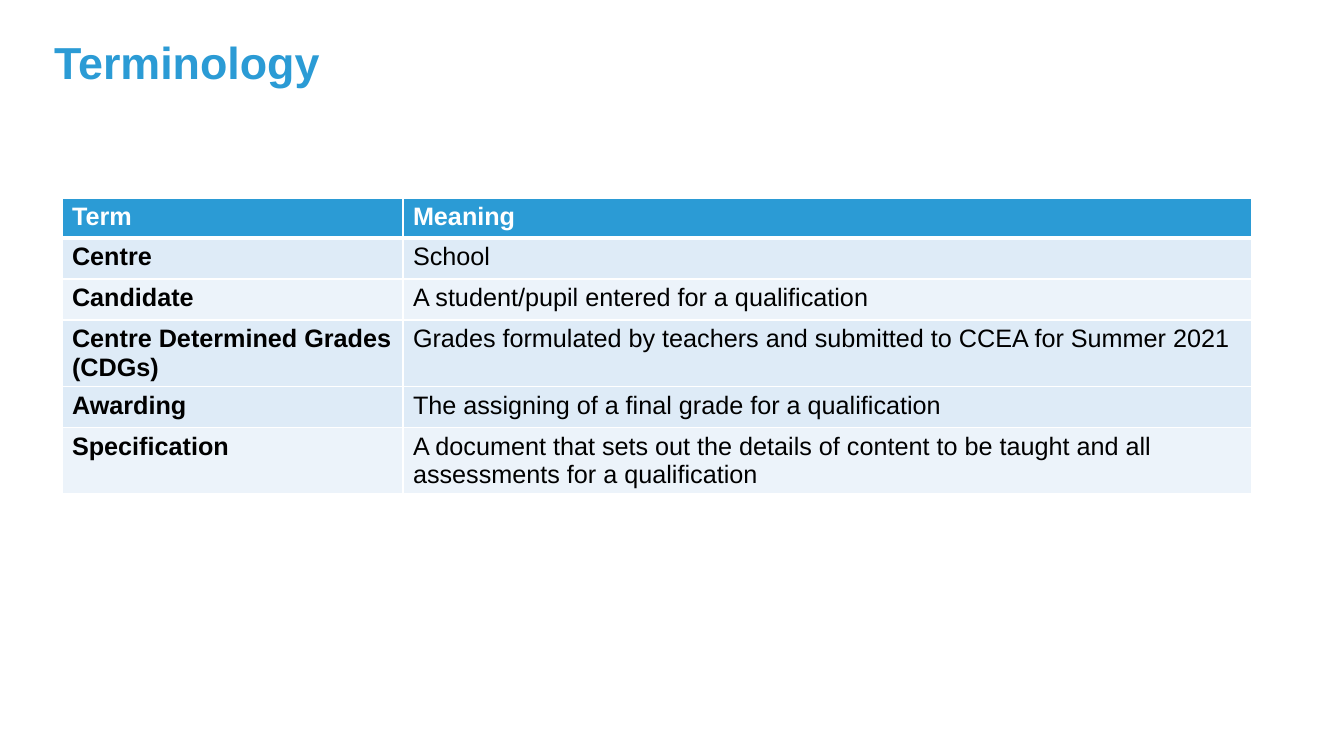
import pptx
import pptx.dml.color
import pptx.enum.text
import pptx.oxml.ns
import pptx.util
import lxml.etree

# Content
TITLE = "Terminology"
HEADER = ("Term", "Meaning")
TERMS = [
    # term, meaning, lines of text, fill
    ("Centre", "School", 1, "DEEBF7"),
    ("Candidate", "A student/pupil entered for a qualification", 1, "ECF3FA"),
    ("Centre Determined Grades (CDGs)",
     "Grades formulated by teachers and submitted to CCEA for Summer 2021",
     2, "DEEBF7"),
    ("Awarding", "The assigning of a final grade for a qualification", 1, "DEEBF7"),
    ("Specification",
     "A document that sets out the details of content to be taught "
     "and all assessments for a qualification", 2, "ECF3FA"),
]

# Style and measures in px
FONT = "Arial"
BLUE, WHITE, BLACK = "2B9BD5", "FFFFFF", "000000"
PX_PER_INCH = 100.8
SLIDE_SIZE = (1344, 756)
TITLE_BOX = (44, 36, 1063, 121)
TABLE_LEFT, TABLE_TOP = 62, 198
COLUMN_WIDTHS = (341, 849)
HEADER_HEIGHT = 40
ROW_HEIGHTS = {1: 41, 2: 66}


def px(length):
    return pptx.util.Emu(round(length * pptx.util.Inches(1) / PX_PER_INCH))


def color(value):
    return pptx.dml.color.RGBColor.from_string(value)


def style_font(font, size, value, bold):
    font.name = FONT
    font.size = pptx.util.Pt(size)
    font.bold = bold
    font.color.rgb = color(value)


def add_borders(cell, bottom_width):
    properties = cell._tc.get_or_add_tcPr()
    qn = pptx.oxml.ns.qn
    for side, width in (("L", 1), ("R", 1), ("T", 1), ("B", bottom_width)):
        line = lxml.etree.SubElement(properties, qn(f"a:ln{side}"),
                                     w=str(pptx.util.Pt(width)))
        fill = lxml.etree.SubElement(line, qn("a:solidFill"))
        lxml.etree.SubElement(fill, qn("a:srgbClr"), val=WHITE)


def fill_cell(cell, text, fill, text_color, bold, bottom_width):
    add_borders(cell, bottom_width)
    cell.fill.solid()
    cell.fill.fore_color.rgb = color(fill)
    cell.text_frame.text = text
    style_font(cell.text_frame.paragraphs[0].runs[0].font, 18, text_color, bold)


def add_title(page):
    box = page.shapes.title
    box.left, box.top, box.width, box.height = map(px, TITLE_BOX)
    frame = box.text_frame
    frame.text = TITLE
    frame.vertical_anchor = pptx.enum.text.MSO_ANCHOR.TOP
    para = frame.paragraphs[0]
    para.alignment = pptx.enum.text.PP_ALIGN.LEFT
    para.line_spacing = 0.9
    style_font(para.runs[0].font, 32, BLUE, True)


def add_terms(page):
    heights = [HEADER_HEIGHT] + [ROW_HEIGHTS[lines] for _, _, lines, _ in TERMS]
    table = page.shapes.add_table(
        len(heights), len(COLUMN_WIDTHS), px(TABLE_LEFT), px(TABLE_TOP),
        px(sum(COLUMN_WIDTHS)), px(sum(heights))).table
    for column, width in zip(table.columns, COLUMN_WIDTHS):
        column.width = px(width)
    for row, height in zip(table.rows, heights):
        row.height = px(height)

    # Header row
    for index, text in enumerate(HEADER):
        fill_cell(table.cell(0, index), text, BLUE, WHITE, True, 3)

    # Term rows
    for number, (term, meaning, _, fill) in enumerate(TERMS, start=1):
        fill_cell(table.cell(number, 0), term, fill, BLACK, True, 1)
        fill_cell(table.cell(number, 1), meaning, fill, BLACK, False, 1)
    # Keep the heavy rule under the header
    for cell in table.rows[1].cells:
        top = cell._tc.tcPr.find(pptx.oxml.ns.qn("a:lnT"))
        top.set("w", str(pptx.util.Pt(3)))


def main():
    deck = pptx.Presentation()
    deck.slide_width, deck.slide_height = map(px, SLIDE_SIZE)
    page = deck.slides.add_slide(deck.slide_layouts[5])
    add_title(page)
    add_terms(page)
    deck.save("out.pptx")


if __name__ == "__main__":
    main()
